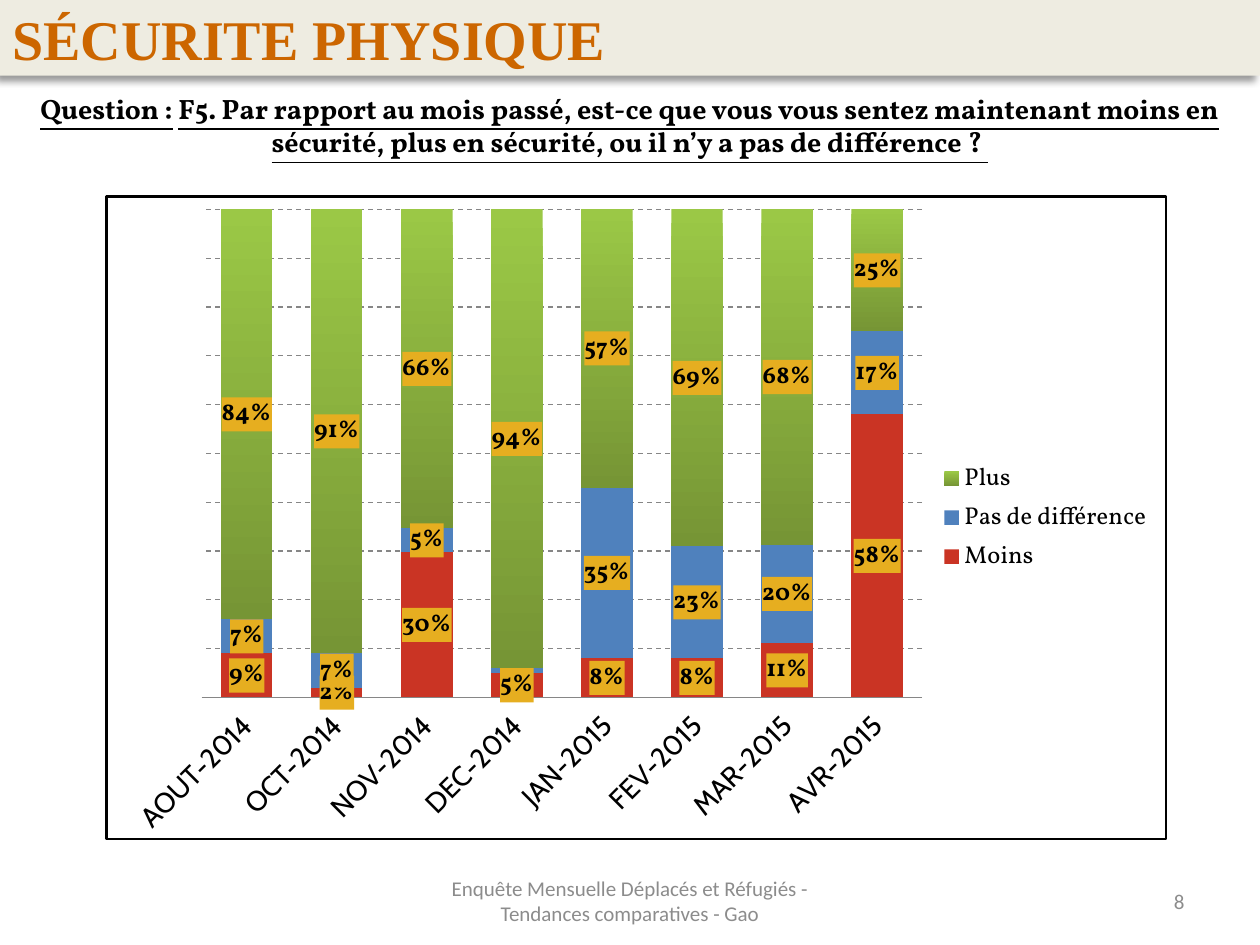
from lxml.etree import fromstring
from pptx import Presentation
from pptx.chart.data import CategoryChartData as ChartData
from pptx.dml.color import RGBColor as Color
from pptx.enum.chart import XL_CHART_TYPE as ChartType, XL_LEGEND_POSITION as LegendPosition
from pptx.enum.chart import XL_TICK_LABEL_POSITION as TickLabel, XL_TICK_MARK as TickMark
from pptx.enum.dml import MSO_LINE as Dash
from pptx.enum.shapes import MSO_SHAPE as Shape
from pptx.enum.text import MSO_ANCHOR as Anchor, PP_ALIGN as Align
from pptx.oxml.ns import nsdecls, qn
from pptx.util import Pt

COLORS = {
    "ink": "000000", "muted": "8C8C8C", "banner": "EEECE1", "title": "CC6600",
    "grid": "868686", "label": "E6AE20", "less": "CA3424", "same": "4F81BD",
    "more_light": "9BC846", "more_dark": "769535",
}
MONTHS = ["AOUT-2014", "OCT-2014", "NOV-2014", "DEC-2014",
          "JAN-2015", "FEV-2015", "MAR-2015", "AVR-2015"]
ANSWERS = {
    "Moins": [0.09, 0.02, 0.3, 0.05, 0.08, 0.08, 0.11, 0.58],
    "Pas de différence": [0.07, 0.07, 0.05, 0.01, 0.35, 0.23, 0.2, 0.17],
    "Plus": [0.84, 0.91, 0.66, 0.94, 0.57, 0.69, 0.68, 0.25],
}


def color(name):
    return Color.from_string(COLORS[name])


def xml(tag, body):
    return fromstring(f"<{tag} {nsdecls('a', 'c')}>{body}</{tag}>")


def solid(name):
    return f'<a:solidFill><a:srgbClr val="{COLORS[name]}"/></a:solidFill>'


class SlideBuilder:
    def __init__(self, page):
        self.page = page

    def style(self, font, face, size, ink="ink", bold=False):
        font.name, font.size, font.bold = face, Pt(size), bold
        font.color.rgb = color(ink)

    def fill_text(self, frame, spans, align, face, size, ink, bold=False):
        frame.word_wrap = True
        frame.vertical_anchor = Anchor.MIDDLE
        para = frame.paragraphs[0]
        para.alignment = align
        for text, underlined in spans:
            span = para.add_run()
            span.text = text
            self.style(span.font, face, size, ink, bold)
            span.font.underline = underlined

    def text(self, place, spans, align, face, size, ink, bold=False):
        box = self.page.shapes.add_textbox(*map(Pt, place))
        self.fill_text(box.text_frame, spans, align, face, size, ink, bold)

    def banner(self, place, title):
        box = self.page.shapes.add_shape(Shape.RECTANGLE, *map(Pt, place))
        box.fill.solid()
        box.fill.fore_color.rgb = color("banner")
        box.line.fill.background()
        box._element.spPr.append(xml("a:effectLst", (
            f'<a:outerShdw blurRad="{Pt(4)}" dist="{Pt(4)}" dir="8100000" rotWithShape="0">'
            f'<a:srgbClr val="{COLORS["ink"]}"><a:alpha val="40000"/></a:srgbClr></a:outerShdw>')))
        self.fill_text(box.text_frame, [(title, False)], Align.LEFT,
                       "Times New Roman", 32, "title", True)

    def chart(self, place, categories, answers):
        data = ChartData(number_format="0%")
        data.categories = categories
        for name, values in answers.items():
            data.add_series(name, values)
        frame = self.page.shapes.add_chart(
            ChartType.COLUMN_STACKED_100, *map(Pt, place), data)
        chart = frame.chart
        self.style(chart.font, "Calibri", 10)
        chart.has_title = False
        chart.has_legend = True
        chart.legend.position = LegendPosition.RIGHT
        chart.legend.include_in_layout = False
        self.style(chart.legend.font, "Vollkorn", 14)
        chart._chartSpace.find(qn("c:chart")).addnext(xml(
            "c:spPr", f'<a:noFill/><a:ln w="{Pt(1.5)}">{solid("ink")}</a:ln>'))
        self.plot_area(chart, x=0.09, y=0.02, w=0.68, h=0.76)
        self.axes(chart)
        plot = chart.plots[0]
        plot.gap_width, plot.overlap, plot.vary_by_categories = 75, 100, False
        less, same, more = plot.series
        for series, name in ((less, "less"), (same, "same")):
            series.format.fill.solid()
            series.format.fill.fore_color.rgb = color(name)
        fill = more.format.fill
        fill.gradient()
        fill.gradient_angle = 270
        for stop, name in zip(fill.gradient_stops, ("more_light", "more_dark")):
            stop.color.rgb = color(name)
        for series in plot.series:
            self.labels(series)
        same.data_labels._element.insert(
            0, xml("c:dLbl", '<c:idx val="3"/><c:delete val="1"/>'))

    def plot_area(self, chart, **fractions):
        area = chart._chartSpace.find(".//" + qn("c:plotArea"))
        for layout in area.findall(qn("c:layout")):
            area.remove(layout)
        modes = '<c:layoutTarget val="inner"/><c:xMode val="edge"/><c:yMode val="edge"/>'
        sizes = "".join(f'<c:{key} val="{value}"/>' for key, value in fractions.items())
        area.insert(0, xml("c:layout", f"<c:manualLayout>{modes}{sizes}</c:manualLayout>"))

    def axes(self, chart):
        months, shares = chart.category_axis, chart.value_axis
        months.major_tick_mark = TickMark.NONE
        months.tick_label_position = TickLabel.LOW
        months.format.line.color.rgb = color("grid")
        self.style(months.tick_labels.font, "Cabin", 16)
        months._element.find(qn("c:txPr")).find(qn("a:bodyPr")).set("rot", "-2700000")
        shares.visible = False
        shares.minimum_scale, shares.maximum_scale, shares.major_unit = 0, 1, 0.1
        shares.tick_labels.number_format = "0%"
        shares.tick_labels.number_format_is_linked = False
        shares.has_major_gridlines = True
        line = shares.major_gridlines.format.line
        line.color.rgb = color("grid")
        line.width = Pt(0.75)
        line.dash_style = Dash.DASH

    def labels(self, series):
        labels = series.data_labels
        labels.show_value = True
        labels.number_format = "0%"
        labels.number_format_is_linked = False
        self.style(labels.font, "Vollkorn", 14, bold=True)
        labels._element.find(qn("c:txPr")).addprevious(xml("c:spPr", solid("label")))


def main():
    deck = Presentation()
    deck.slide_width, deck.slide_height = Pt(720), Pt(540)
    builder = SlideBuilder(deck.slides.add_slide(deck.slide_layouts[6]))
    builder.text((516, 500.5, 168, 28.75), [("8", False)],
                 Align.RIGHT, "Calibri", 12, "muted")
    builder.text((246, 500.5, 228, 28.75),
                 [("Enquête Mensuelle Déplacés et Réfugiés - Tendances comparatives - Gao", False)],
                 Align.CENTER, "Calibri", 12, "muted")
    builder.banner((0, 0, 720, 43.2), "SÉCURITE PHYSIQUE")
    builder.text((0, 48.25, 720, 46), [
        ("Question :", True), (" ", False),
        ("F5. Par rapport au mois passé, est-ce que vous vous sentez maintenant moins en "
         "sécurité, plus en sécurité, ou il n’y a pas de différence ? ", True),
    ], Align.CENTER, "Vollkorn", 16, "ink", True)
    builder.chart((60, 111.6, 607, 368.5), MONTHS, ANSWERS)
    deck.save("out.pptx")


if __name__ == "__main__":
    main()
